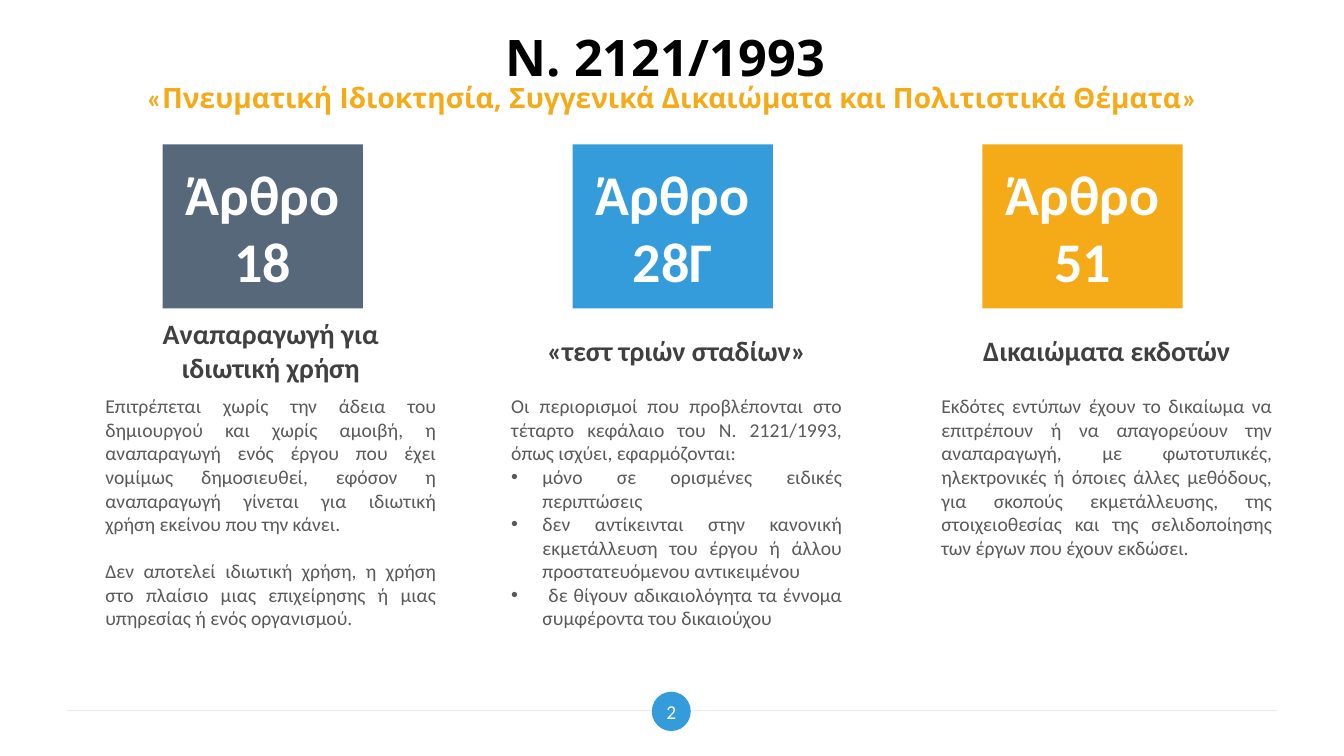
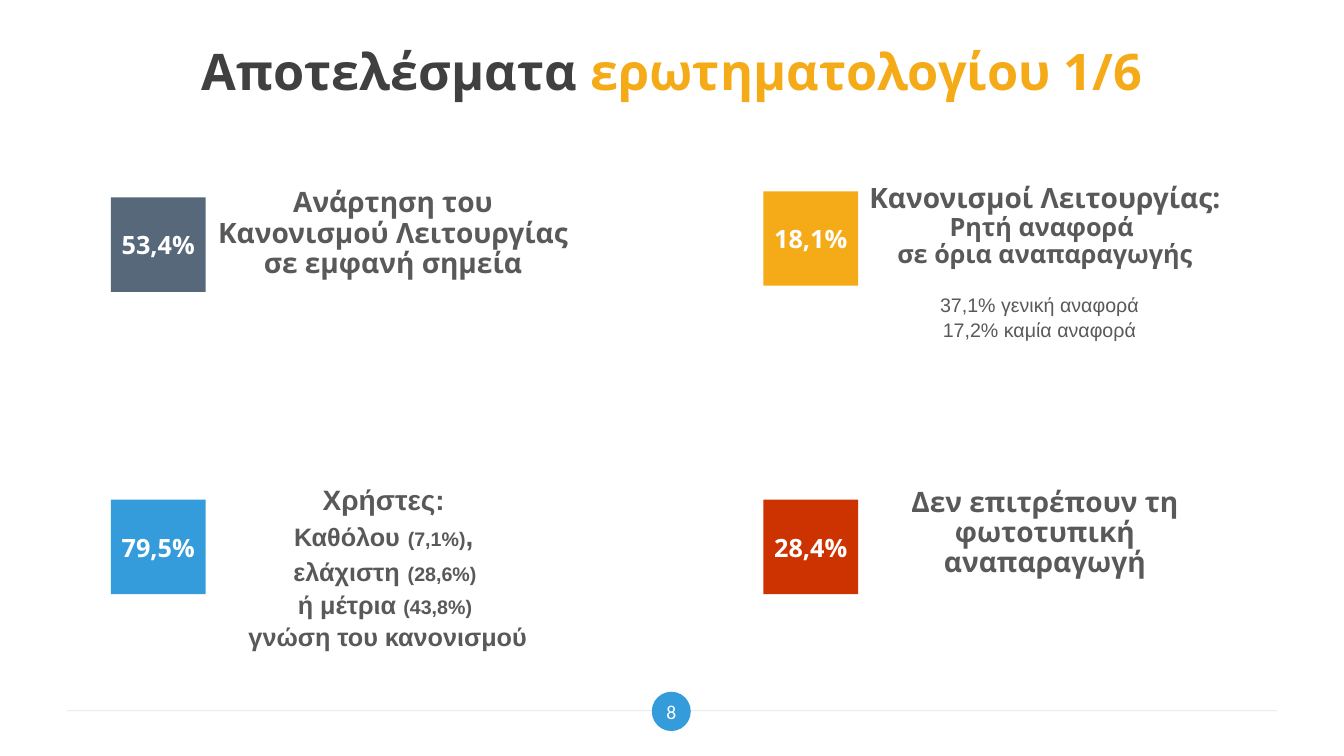
from lxml.etree import SubElement
from pptx import Presentation
from pptx.dml.color import RGBColor
from pptx.enum.shapes import MSO_CONNECTOR, MSO_SHAPE
from pptx.enum.text import MSO_ANCHOR, PP_ALIGN
from pptx.oxml.ns import qn
from pptx.util import Inches, Pt

WIDTH, HEIGHT = Inches(13.33), Inches(7.5)
SLATE, BLUE, AMBER, RED = "57687B", "359CDB", "F4AB17", "CC3300"
BLACK, DARK, GRAY, PALE, WHITE = "000000", "404040", "595959", "D9D9D9", "FFFFFF"
SANS, BODY, PLAIN = "Open Sans", "Calibri", "Arial"
LABEL_SPACING = {SANS: 0.9, PLAIN: 1.06}

ARTICLES = [
    ("Άρθρο 18", SLATE, 7.1, "Αναπαραγωγή για ιδιωτική χρήση", [
        "Επιτρέπεται χωρίς την άδεια του δημιουργού και χωρίς αμοιβή, η "
        "αναπαραγωγή ενός έργου που έχει νομίμως δημοσιευθεί, εφόσον η "
        "αναπαραγωγή γίνεται για ιδιωτική χρήση εκείνου που την κάνει.",
        "Δεν αποτελεί ιδιωτική χρήση, η χρήση στο πλαίσιο μιας επιχείρησης "
        "ή μιας υπηρεσίας ή ενός οργανισμού."], []),
    ("Άρθρο 28Γ", BLUE, 37.3, "«τεστ τριών σταδίων»", [
        "Οι περιορισμοί που προβλέπονται στο τέταρτο κεφάλαιο του "
        "Ν. 2121/1993, όπως ισχύει, εφαρμόζονται:"], [
        "μόνο σε ορισμένες ειδικές περιπτώσεις",
        "δεν αντίκεινται στην κανονική εκμετάλλευση του έργου ή άλλου "
        "προστατευόμενου αντικειμένου",
        " δε θίγουν αδικαιολόγητα τα έννομα συμφέροντα του δικαιούχου"]),
    ("Άρθρο 51", AMBER, 69.3, "Δικαιώματα εκδοτών", [
        "Εκδότες εντύπων έχουν το δικαίωμα να επιτρέπουν ή να απαγορεύουν την "
        "αναπαραγωγή, με φωτοτυπικές, ηλεκτρονικές ή όποιες άλλες μεθόδους, "
        "για σκοπούς εκμετάλλευσης, της στοιχειοθεσίας και της σελιδοποίησης "
        "των έργων που έχουν εκδώσει."], []),
]

RESULTS = [
    ("53,4%", SLATE, 8.25, 26.1, SANS, 15.3, 24.3, [
        [("Ανάρτηση του Κανονισμού Λειτουργίας σε εμφανή σημεία", 20)]]),
    ("79,5%", BLUE, 8.25, 66.1, PLAIN, 14.9, 62.9, [
        [("Χρήστες: ", 20)],
        [("Καθόλου", 18), (" ", 20), ("(7,1%)", 14), (", ", 20)],
        [("ελάχιστη", 18), (" ", 20), ("(28,6%) ", 14)],
        [("ή μέτρια ", 18), ("(43,8%) ", 14)],
        [("γνώση του κανονισμού", 18)]]),
    ("18,1%", AMBER, 56.8, 25.3, SANS, 63.8, 23.7, [
        [("Κανονισμοί Λειτουργίας:", 20)],
        [("Ρητή αναφορά ", 18)],
        [("σε όρια αναπαραγωγής", 18)]]),
    ("28,4%", RED, 56.8, 66.1, SANS, 63.8, 63.9, [
        [("Δεν επιτρέπουν τη φωτοτυπική αναπαραγωγή", 20)]]),
]


def color(value):
    return RGBColor.from_string(value)


def across(percent):
    return round(WIDTH * percent / 100)


def down(percent):
    return round(HEIGHT * percent / 100)


def area(left, top, width, height):
    return across(left), down(top), across(width), down(height)


def set_font(font, name=None, size=None, fill=None, bold=None):
    if name:
        font.name = name
    if size:
        font.size = Pt(size)
    if fill:
        font.color.rgb = color(fill)
    if bold is not None:
        font.bold = bold


def add_para(frame, spans, name, size, fill, bold=False,
             align=PP_ALIGN.CENTER, spacing=None, bullet=False):
    first = frame.paragraphs[0]
    para = frame.add_paragraph() if first.runs else first
    para.alignment = align
    if spacing:
        para.line_spacing = spacing
    if bullet:
        properties = para._p.get_or_add_pPr()
        properties.set("marL", str(Inches(0.31)))
        properties.set("indent", str(-Inches(0.31)))
        SubElement(properties, qn("a:buFont")).set("typeface", PLAIN)
        SubElement(properties, qn("a:buChar")).set("char", "•")
    set_font(para.font, name, size, fill, bold)
    for text, style in spans:
        span = para.add_run()
        span.text = text
        set_font(span.font, **style)
    return para


def add_box(page, place, anchor=MSO_ANCHOR.TOP):
    frame = page.shapes.add_textbox(*area(*place)).text_frame
    frame.word_wrap = True
    frame.vertical_anchor = anchor
    return frame


def add_tile(page, kind, place, fill, text, name, size, bold, inset):
    tile = page.shapes.add_shape(kind, *area(*place))
    tile.shadow.inherit = False
    tile.fill.solid()
    tile.fill.fore_color.rgb = color(fill)
    tile.line.fill.background()
    frame = tile.text_frame
    frame.word_wrap = True
    frame.vertical_anchor = MSO_ANCHOR.MIDDLE
    frame.margin_left = frame.margin_right = Inches(inset)
    frame.margin_top = frame.margin_bottom = 0
    add_para(frame, [(text, {})], name, size, WHITE, bold)


def add_footer(page, number):
    rule = page.shapes.add_connector(
        MSO_CONNECTOR.STRAIGHT, across(5), down(94), across(95), down(94))
    rule.line.width = Pt(0.75)
    rule.line.color.rgb = color(PALE)
    tint = rule.line._ln.find(".//" + qn("a:srgbClr"))
    SubElement(tint, qn("a:alpha")).set("val", "50000")
    SubElement(rule._element.spPr, qn("a:effectLst"))
    add_tile(page, MSO_SHAPE.OVAL, (48.5, 91.5, 2.9, 5.2), BLUE,
             str(number), BODY, 14, False, 0)


def start_page(deck, number):
    page = deck.slides.add_slide(deck.slide_layouts[6])
    add_footer(page, number)
    return page, add_box(page, (5, 3.2, 90, 12.1), MSO_ANCHOR.MIDDLE)


def add_article(page, index, article):
    label, fill, left, heading, texts, points = article
    add_tile(page, MSO_SHAPE.RECTANGLE, (12.1 + 30.5 * index, 19.1, 14.9, 21.7),
             fill, label, BODY, 40, True, 0.1)
    heading_frame = add_box(page, (left + 1.85, 41.2, 22.4, 10.3), MSO_ANCHOR.MIDDLE)
    add_para(heading_frame, [(heading, {})], BODY, 20, DARK, True)
    frame = add_box(page, (left, 51.5, 26.1, 32.8))
    for position, text in enumerate(texts):
        para = add_para(frame, [(text, {})], BODY, 14, GRAY, align=PP_ALIGN.JUSTIFY)
        if position:
            para.space_before = Pt(17)
    for point in points:
        add_para(frame, [(point, {})], BODY, 14, GRAY,
                 align=PP_ALIGN.JUSTIFY, bullet=True)


def add_label(page, place, name, lines, bold):
    frame = add_box(page, place)
    for line in lines:
        sizes = {size for _, size in line}
        shared = sizes.pop() if len(sizes) == 1 else None
        spans = [(text, {} if shared else {"size": size}) for text, size in line]
        add_para(frame, spans, name, shared, GRAY, bold, spacing=LABEL_SPACING[name])


def build_law(deck):
    page, title = start_page(deck, 2)
    add_para(title, [("Ν. 2121/1993 ", {})], SANS, 36, BLACK, True)
    subtitle = [
        ("«", {"name": BODY}),
        ("Πνευματική Ιδιοκτησία, Συγγενικά Δικαιώματα και Πολιτιστικά Θέματα",
         {"name": SANS}),
        ("»", {"name": BODY})]
    add_para(title, subtitle, None, 20, AMBER, True, spacing=0.83)
    for index, article in enumerate(ARTICLES):
        add_article(page, index, article)


def build_results(deck):
    page, title = start_page(deck, 8)
    add_para(title, [("Αποτελέσματα ", {"fill": DARK}),
                     ("ερωτηματολογίου 1/6", {"fill": AMBER})], SANS, 36, None, True)
    for share, fill, left, top, name, label_left, label_top, lines in RESULTS:
        add_tile(page, MSO_SHAPE.RECTANGLE, (left, top, 7.05, 12.5),
                 fill, share, SANS, 18, True, 0.05)
        add_label(page, (label_left, label_top, 27.9, 14.8), name, lines, True)
    add_label(page, (63.4, 37.9, 27.9, 7.6), PLAIN,
              [[("37,1% γενική αναφορά", 14)], [("17,2% καμία αναφορά", 14)]], False)


def main():
    deck = Presentation()
    deck.slide_width, deck.slide_height = WIDTH, HEIGHT
    build_law(deck)
    build_results(deck)
    deck.save("out.pptx")


if __name__ == "__main__":
    main()
